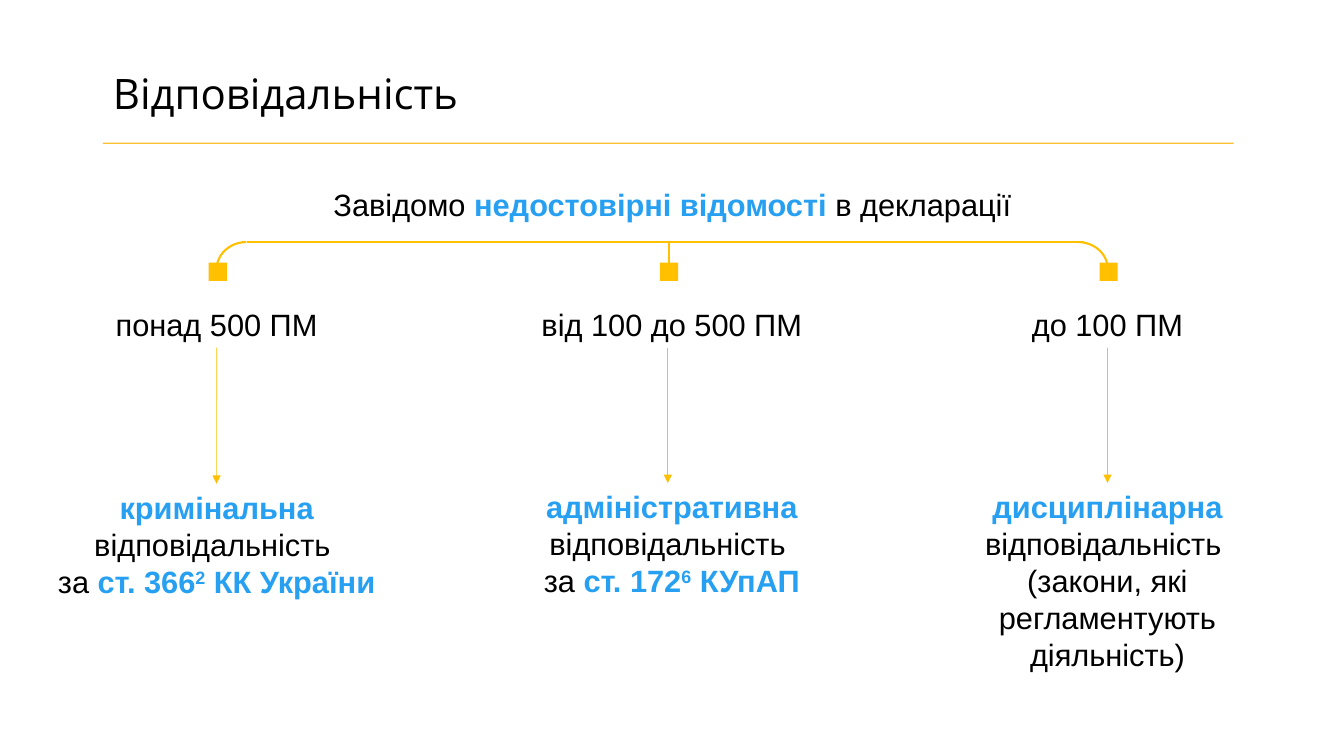
from lxml import etree
from pptx import Presentation
from pptx import util as u
from pptx.dml import color
from pptx.enum import shapes, text
from pptx.oxml import ns

Cm = u.Cm
COLORS = {"text": "000000", "accent": "27A0F2", "gold": "FFC000", "rule": "FBBB1C"}
rgb = {name: color.RGBColor.from_string(h) for name, h in COLORS.items()}

prs = Presentation()
prs.slide_width, prs.slide_height = Cm(33.87), Cm(19.05)
s = prs.slides.add_slide(prs.slide_layouts[5])


def add_text(sp, paragraphs, size=22, font="Arial", align=text.PP_ALIGN.CENTER):
    """Fill a shape; each run is (text, style), style being "", "b" or "sup"."""
    tf = sp.text_frame
    tf.word_wrap = True
    tf.auto_size = text.MSO_AUTO_SIZE.SHAPE_TO_FIT_TEXT
    for i, runs in enumerate(paragraphs):
        p = tf.add_paragraph() if i else tf.paragraphs[0]
        p.alignment = align
        for words, style in runs:
            if words == "\n":
                p.add_line_break()
                continue
            r = p.add_run()
            r.text = words
            fmt = {"size": u.Pt(size), "name": font, "bold": bool(style)}
            for key, value in fmt.items():
                setattr(r.font, key, value)
            r.font.color.rgb = rgb["accent" if style else "text"]
            if style == "sup":
                r.font._element.set("baseline", "30000")
    return sp


def add_line(x1, y1, x2, y2, width, name="gold", arrow=False):
    c = s.shapes.add_connector(shapes.MSO_CONNECTOR.STRAIGHT, Cm(x1), Cm(y1), Cm(x2), Cm(y2))
    c.line.color.rgb = rgb[name]
    c.line.width = u.Pt(width)
    if arrow:
        etree.SubElement(c.line._get_or_add_ln(), ns.qn("a:tailEnd"), type="triangle")
    etree.SubElement(c._element.spPr, ns.qn("a:effectLst"))
    return c


# Title and the rule under it
title = s.shapes.title
title.left, title.top, title.width, title.height = Cm(2.59), Cm(1.55), Cm(26.67), Cm(1.55)
add_text(title, [[("Відповідальність", "")]], 30, "Open Sans", text.PP_ALIGN.LEFT)
title.text_frame.vertical_anchor = text.MSO_ANCHOR.MIDDLE
rule = add_line(31.09, 3.61, 2.59, 3.61, 1, "rule")
rgb_node = rule._element.spPr.find(".//" + ns.qn("a:srgbClr"))
etree.SubElement(rgb_node, ns.qn("a:alpha"), val="90000")

# Headline
headline = s.shapes.add_textbox(Cm(7.32), Cm(4.55), Cm(19.25), Cm(1.19))
add_text(headline, [[("Завідомо ", ""), ("недостовірні відомості ", "b"), ("в декларації", "")]])

# Bracket: a bar with a rounded corner at each end
add_line(6.22, 6.1, 27.33, 6.1, 1.5)
for left, start, end in ((5.46, 108, 162), (26.42, 162, 0)):
    arc = s.shapes.add_shape(shapes.MSO_SHAPE.ARC, Cm(left), Cm(6.1), Cm(1.5), Cm(1.37))
    arc.adjustments[0], arc.adjustments[1] = start, end
    arc.fill.background()
    arc.line.color.rgb = rgb["gold"]
    arc.line.width = u.Pt(1.5)
    arc.shadow.inherit = False

# Branches: square, condition, arrow, kind of liability
CONDITION_TOP, CONDITION_H = 7.57, 1.19
BRANCHES = [
    # arrow x, text centre, condition, its width, result top, width, height, result
    (5.46, 5.46, "понад 500 ПМ", 7.95, 12.19, 9.65, 3.07,
     [[("кримінальна ", "b"), ("відповідальність ", ""), ("\n", ""), ("за ", ""),
       ("ст. 366", "b"), ("2", "sup"), (" КК України", "b")]]),
    (16.83, 16.93, "від 100 до 500 ПМ", 7.95, 12.17, 8.36, 3.07,
     [[("адміністративна ", "b"), ("відповідальність ", ""), ("\n", ""), ("за ", ""),
       ("ст. 172", "b"), ("6", "sup"), (" КУпАП", "b")]]),
    (27.91, 27.91, "до 100 ПМ", 9.45, 12.17, 8.36, 4.95,
     [[("дисциплінарна ", "b"), ("відповідальність ", "")],
      [("(закони, які регламентують діяльність)", "")]]),
]
SQUARE = 0.46
squares = []
for x, centre, words, cond_w, top, res_w, res_h, result in BRANCHES:
    sq = s.shapes.add_shape(shapes.MSO_SHAPE.RECTANGLE, Cm(x + 0.03 - SQUARE / 2),
                            Cm(6.62), Cm(SQUARE), Cm(SQUARE))
    sq.fill.solid()
    sq.fill.fore_color.rgb = rgb["gold"]
    sq.line.fill.background()
    sq.shadow.inherit = False
    squares.append(sq)

    cond = s.shapes.add_textbox(Cm(centre - cond_w / 2), Cm(CONDITION_TOP),
                                Cm(cond_w), Cm(CONDITION_H))
    add_text(cond, [[(words, "")]])
    res = s.shapes.add_textbox(Cm(centre - res_w / 2), Cm(top), Cm(res_w), Cm(res_h))
    add_text(res, result)

    arrow = add_line(x, CONDITION_TOP + CONDITION_H, x, top, 0.5, arrow=True)
    if x == centre:
        arrow.begin_connect(cond, 2)
        arrow.end_connect(res, 0)

# Stem from the middle square up to the bar
stem = add_line(16.86, 6.62, 16.86, 6.1, 1.5)
stem.begin_connect(squares[1], 0)

prs.save("out.pptx")
